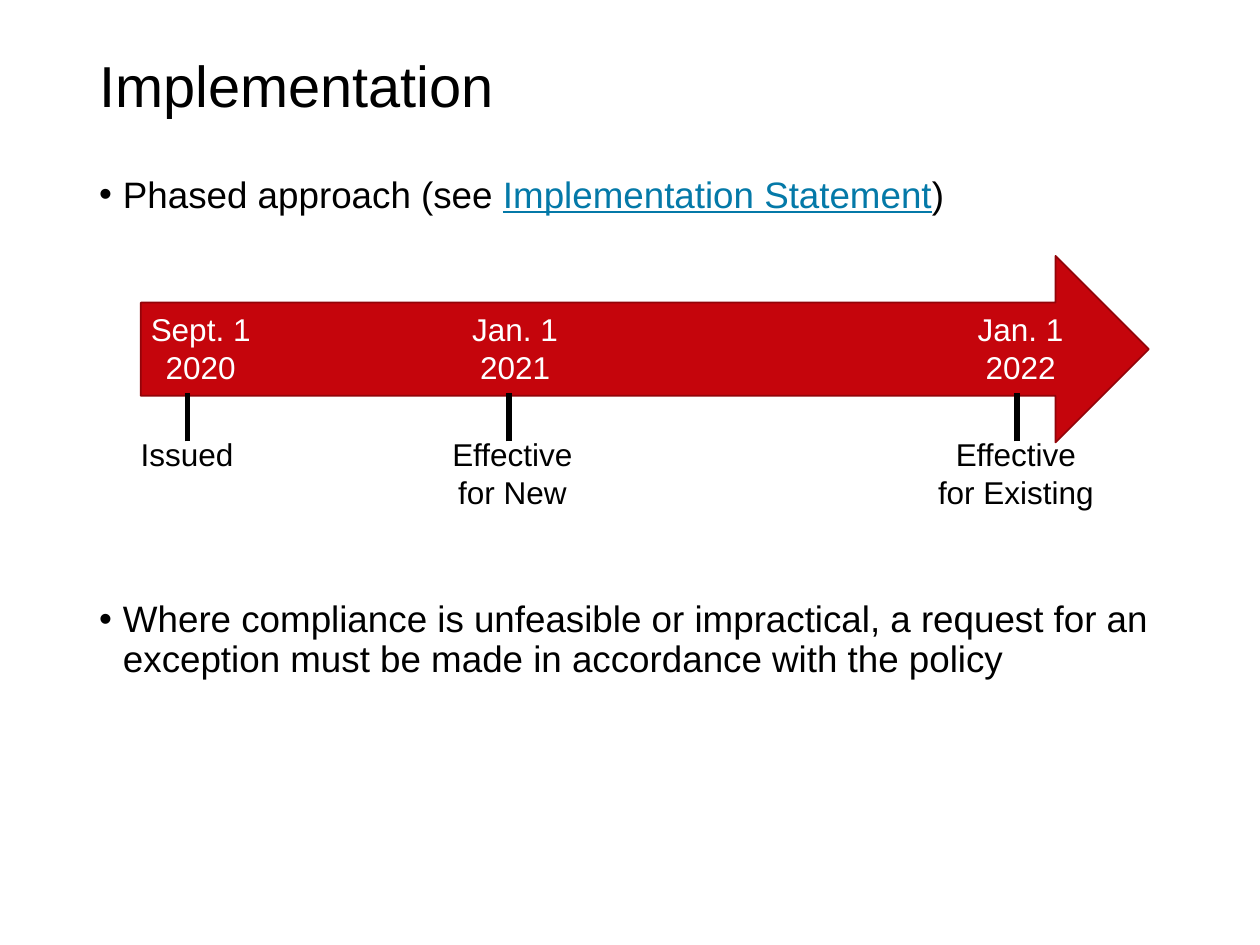
from pptx import Presentation
from pptx.dml.color import RGBColor
from pptx.enum.shapes import MSO_CONNECTOR, MSO_SHAPE
from pptx.enum.text import MSO_ANCHOR, MSO_AUTO_SIZE, PP_ALIGN
from pptx.oxml.ns import qn
from pptx.util import Cm, Pt
from lxml.etree import SubElement

BLACK = RGBColor(0x00, 0x00, 0x00)
WHITE = RGBColor(0xFF, 0xFF, 0xFF)
RED = RGBColor(0xC5, 0x05, 0x0C)
DARK_RED = RGBColor(0x92, 0x04, 0x09)
LINK_BLUE = RGBColor(0x04, 0x79, 0xA8)
FONT = "Arial"

TITLE = "Implementation"
# Each bullet: space before in points, then (text, is_link) pieces
BULLETS = [
    (0, [("Phased approach (see ", False), ("Implementation Statement", True), (")", False)]),
    (220, [("Where compliance is unfeasible or impractical, a request for an "
            "exception must be made in accordance with the policy", False)]),
]
# Tick x; day, year, centre and width of date; text, centre and width of label (cm)
MILESTONES = [
    (3.78, ("Sept. 1", "2020", 4.06, 2.54), ("Issued", 3.77, 2.41)),
    (10.26, ("Jan. 1", "2021", 10.4, 2.26), ("Effective\nfor New", 10.33, 2.97)),
    (20.5, ("Jan. 1", "2022", 20.59, 2.26), ("Effective\nfor Existing", 20.48, 3.68)),
]
LEFT, WIDTH = 1.75, 21.9
DATE_TOP, LABEL_TOP = 6.13, 8.64
TICK_TOP, TICK_BOTTOM = 7.92, 8.9
LINE_HEIGHT, BOX_PADDING = 0.76, 0.25
BULLET_INDENT = Cm(0.48)


def style(font, size, color):
    font.name, font.size = FONT, Pt(size)
    font.color.rgb = color


def add_box(slide, left, top, width, height):
    tf = slide.shapes.add_textbox(Cm(left), Cm(top), Cm(width), Cm(height)).text_frame
    tf.word_wrap = True
    return tf


def add_centred_note(slide, centre, top, width, paragraphs, color):
    """Add an unwrapped 18 pt box around a centre; paragraphs are (text, alignment)."""
    lines = sum(text.count("\n") + 1 for text, _ in paragraphs)
    tf = add_box(slide, centre - width / 2, top, width, lines * LINE_HEIGHT + BOX_PADDING)
    tf.word_wrap = False
    tf.auto_size = MSO_AUTO_SIZE.SHAPE_TO_FIT_TEXT
    for i, (text, align) in enumerate(paragraphs):
        p = tf.add_paragraph() if i else tf.paragraphs[0]
        p.text = text
        p.alignment = align
        for r in p.runs:
            style(r.font, 18, color)


def add_bullet(p, space, pieces):
    pPr = p._p.get_or_add_pPr()
    pPr.set("marL", str(BULLET_INDENT))
    pPr.set("indent", str(-BULLET_INDENT))
    SubElement(pPr, qn("a:buFont")).set("typeface", FONT)
    SubElement(pPr, qn("a:buChar")).set("char", "•")
    p.line_spacing = 0.9
    p.space_before = Pt(space)
    for text, is_link in pieces:
        r = p.add_run()
        r.text = text
        style(r.font, 21, LINK_BLUE if is_link else BLACK)
        if is_link:
            r.font.underline = True


def add_tick(slide, x):
    tick = slide.shapes.add_connector(
        MSO_CONNECTOR.STRAIGHT, Cm(x), Cm(TICK_BOTTOM), Cm(x), Cm(TICK_TOP))
    tick.line.color.rgb = BLACK
    tick.line.width = Pt(3)
    SubElement(tick._element.spPr, qn("a:effectLst"))


prs = Presentation()
prs.slide_width, prs.slide_height = Cm(25.4), Cm(19.05)
slide = prs.slides.add_slide(prs.slide_layouts[6])

tf = add_box(slide, LEFT, 0.89, WIDTH, 1.78)
tf.vertical_anchor = MSO_ANCHOR.MIDDLE
tf.text = TITLE
p = tf.paragraphs[0]
p.line_spacing = 0.9
style(p.runs[0].font, 33, BLACK)

tf = add_box(slide, LEFT, 3.43, WIDTH, 14.02)
for i, (space, pieces) in enumerate(BULLETS):
    add_bullet(tf.add_paragraph() if i else tf.paragraphs[0], space, pieces)

arrow = slide.shapes.add_shape(MSO_SHAPE.RIGHT_ARROW, Cm(2.84), Cm(5.16), Cm(20.32), Cm(3.76))
arrow.shadow.inherit = False
arrow.fill.solid()
arrow.fill.fore_color.rgb = RED
arrow.line.color.rgb = DARK_RED
arrow.line.width = Pt(1)

for tick_x, (day, year, date_x, date_w), (label, label_x, label_w) in MILESTONES:
    add_centred_note(slide, date_x, DATE_TOP, date_w,
                     [(day, PP_ALIGN.LEFT), (year, PP_ALIGN.CENTER)], WHITE)
    add_centred_note(slide, label_x, LABEL_TOP, label_w, [(label, PP_ALIGN.CENTER)], BLACK)
    add_tick(slide, tick_x)

prs.save("out.pptx")
